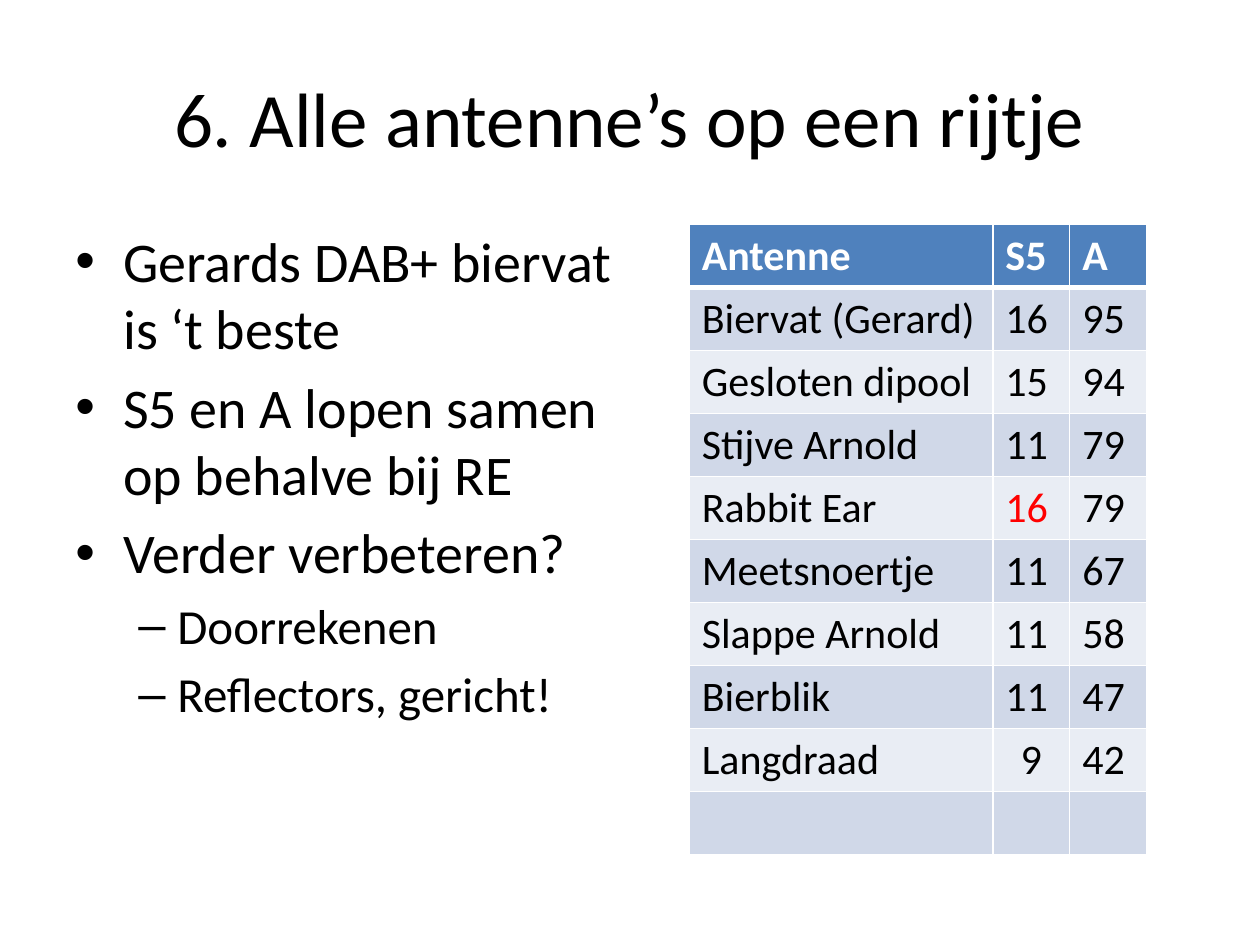
from dataclasses import dataclass

from lxml import etree
from pptx import Presentation
from pptx.dml.color import RGBColor as RGB
from pptx.enum.text import MSO_ANCHOR as Anchor, PP_ALIGN as Align
from pptx.oxml.ns import qn
from pptx.util import Inches, Pt


@dataclass(frozen=True)
class Theme:
    font: str = "Calibri"
    ink: str = "000000"
    white: str = "FFFFFF"
    accent: str = "FF0000"
    header: str = "4F81BD"
    bands: tuple = ("D0D8E8", "E9EDF4")
    title: int = 44
    levels: tuple = (32, 28)
    table: int = 24


theme = Theme()


def style(para, size, color, bold=False):
    para.font.name = theme.font
    para.font.size = Pt(size)
    para.font.bold = bold
    para.font.color.rgb = RGB.from_string(color)


def add_border(cell, side, points):
    line = etree.SubElement(cell._tc.get_or_add_tcPr(), qn(f"a:ln{side}"), w=str(Pt(points)))
    fill = etree.SubElement(line, qn("a:solidFill"))
    etree.SubElement(fill, qn("a:srgbClr"), val=theme.white)


deck = Presentation()
deck.slide_width, deck.slide_height = Inches(10), Inches(7.5)
page = deck.slides.add_slide(deck.slide_layouts[6])

# Title
title = page.shapes.add_textbox(Inches(0.5), Inches(0.3), Inches(9), Inches(1.25)).text_frame
title.word_wrap = True
title.vertical_anchor = Anchor.MIDDLE
para = title.paragraphs[0]
para.text = "6. Alle antenne’s op een rijtje"
para.alignment = Align.CENTER
style(para, theme.title, theme.ink)

# Antenna table
rows = [
    ("Antenne", "S5", "A"),
    ("Biervat (Gerard)", "16", "95"),
    ("Gesloten dipool", "15", "94"),
    ("Stijve Arnold", "11", "79"),
    ("Rabbit Ear", "16", "79"),
    ("Meetsnoertje", "11", "67"),
    ("Slappe Arnold", "11", "58"),
    ("Bierblik", "11", "47"),
    ("Langdraad", "9", "42"),
    ("", "", ""),
]
table = page.shapes.add_table(
    len(rows), 3, Inches(5.47), Inches(1.78), Inches(3.63), Inches(5)).table
for column, width in zip(table.columns, (2.41, 0.61, 0.61)):
    column.width = Inches(width)
for r, row in enumerate(rows):
    table.rows[r].height = Inches(0.5)
    is_header = r == 0
    for c, text in enumerate(row):
        cell = table.cell(r, c)
        for side in "LRTB":
            thick = (is_header and side == "B") or (r == 1 and side == "T")
            add_border(cell, side, 3 if thick else 1)
        cell.fill.solid()
        cell.fill.fore_color.rgb = RGB.from_string(
            theme.header if is_header else theme.bands[(r - 1) % 2])
        para = cell.text_frame.paragraphs[0]
        para.text = text
        if text == "9":
            para.alignment = Align.CENTER
        outlier = row[0] == "Rabbit Ear" and c == 1
        color = theme.white if is_header else theme.accent if outlier else theme.ink
        style(para, theme.table, color, bold=is_header)

# Bulleted conclusions
bullets = [
    (0, "Gerards DAB+ biervat is ‘t beste"),
    (0, "S5 en A lopen samen op behalve bij RE"),
    (0, "Verder verbeteren?"),
    (1, "Doorrekenen"),
    (1, "Reflectors, gericht!"),
]
level_marks = [("•", 0.38, -0.38), ("–", 0.81, -0.31)]
body = page.shapes.add_textbox(Inches(0.5), Inches(1.75), Inches(4.5), Inches(4.95)).text_frame
body.word_wrap = True
for i, (level, text) in enumerate(bullets):
    para = body.add_paragraph() if i else body.paragraphs[0]
    para.text = text
    para.level = level
    mark, margin, indent = level_marks[level]
    size = theme.levels[level]
    props = para._p.get_or_add_pPr()
    props.set("marL", str(Inches(margin)))
    props.set("indent", str(Inches(indent)))
    etree.SubElement(props, qn("a:buFont"), typeface="Arial")
    etree.SubElement(props, qn("a:buChar"), char=mark)
    para.space_before = Pt(size * 0.2)
    style(para, size, theme.ink)

deck.save("out.pptx")
